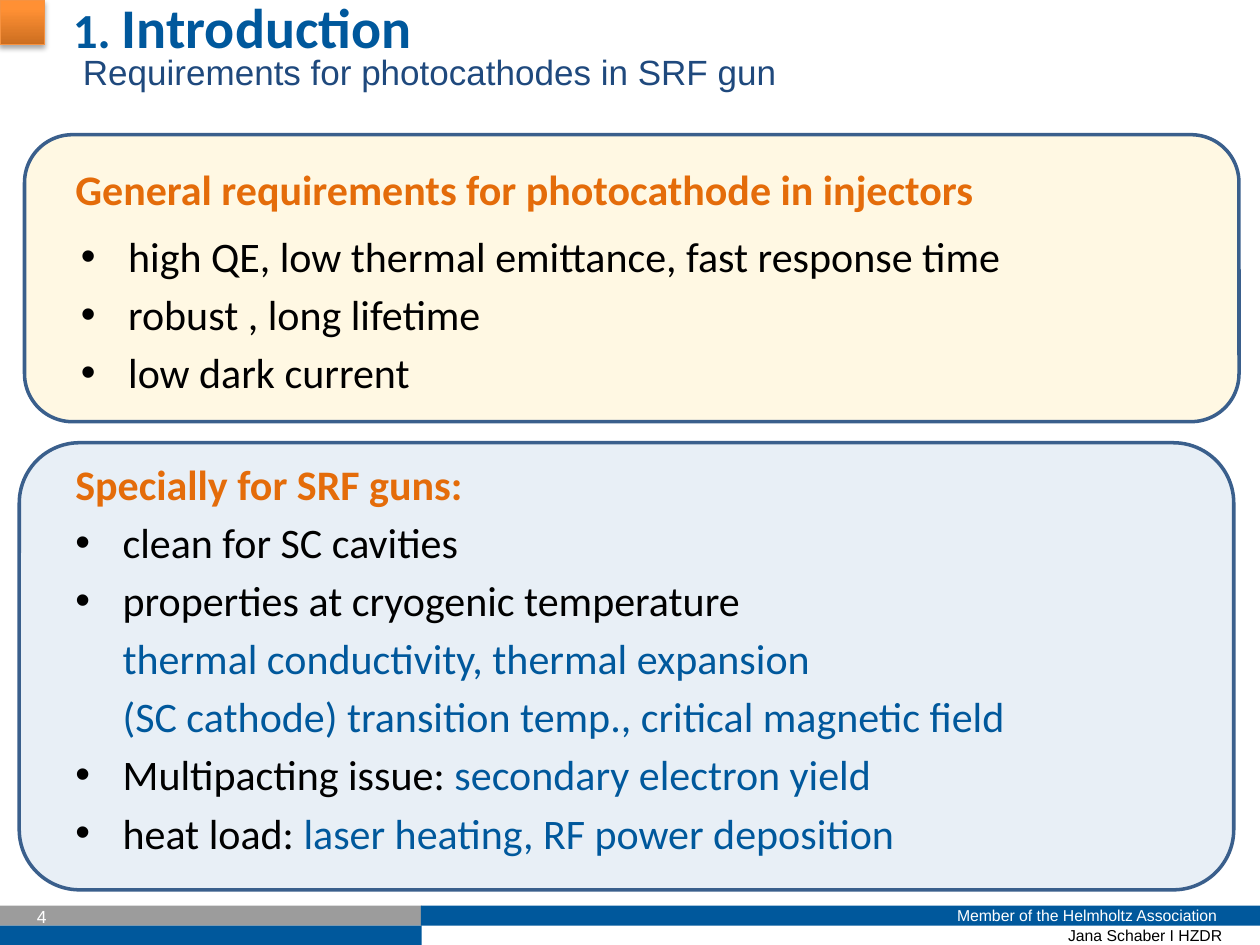
from lxml import etree
from pptx import Presentation
from pptx import util as u
from pptx.dml import color
from pptx.enum import shapes, text
from pptx.oxml import ns

BLUE, ORANGE, BLACK, WHITE = "00589C", "E46C0A", "000000", "FFFFFF"
GREY, NAVY, OUTLINE = "9C9C9C", "1F497D", "3A5F8C"


def rgb(code):
    return color.RGBColor.from_string(code)


def add_xml(parent, tag, **attributes):
    return etree.SubElement(parent, ns.qn(tag), attributes)


class SlideBuilder:
    heading_font, plain_font = "Calibri", "Arial"
    indent, gap = 27, 4.4

    def __init__(self, slide):
        self.slide = slide

    def place(self, item, box):
        item.left, item.top, item.width, item.height = (u.Pt(v) for v in box)

    def shape(self, kind, box, fill, opacity=None, outline=None, weight=2):
        item = self.slide.shapes.add_shape(kind, *(u.Pt(v) for v in box))
        item.fill.solid()
        item.fill.fore_color.rgb = rgb(fill)
        if opacity:
            tint = item._element.spPr.find(".//" + ns.qn("a:srgbClr"))
            add_xml(tint, "a:alpha", val=str(opacity * 1000))
        if outline:
            item.line.color.rgb = rgb(outline)
            item.line.width = u.Pt(weight)
        else:
            item.line.fill.background()
        item.shadow.inherit = False
        return item

    def panel(self, box, fill, opacity, corner):
        item = self.shape(shapes.MSO_SHAPE.ROUNDED_RECTANGLE, box, fill, opacity, OUTLINE)
        item.adjustments[0] = corner

    def bar(self, box, fill):
        return self.shape(shapes.MSO_SHAPE.RECTANGLE, box, fill)

    def corner_mark(self, box):
        mark = self.shape(shapes.MSO_SHAPE.RECTANGLE, box, ORANGE, outline="F69240", weight=0.75)
        mark.fill.gradient()
        mark.fill.gradient_angle = 90
        for stop, (position, code) in zip(mark.fill.gradient_stops, [(0, "CC6E20"), (0.8, "FF9034")]):
            stop.position = position
            stop.color.rgb = rgb(code)
        effects = mark._element.spPr.find(ns.qn("a:effectLst"))
        shadow = add_xml(effects, "a:outerShdw", blurRad=str(u.Pt(3.1)), dist=str(u.Pt(1.8)),
                         dir="5400000", rotWithShape="0")
        add_xml(add_xml(shadow, "a:srgbClr", val=BLACK), "a:alpha", val="35000")

    def fill_paragraph(self, paragraph, runs, font, bold=False, align=text.PP_ALIGN.LEFT):
        """Each run is (words, size, colour)."""
        paragraph.text = runs[0][0]
        for words, *_ in runs[1:]:
            paragraph.add_run().text = words
        paragraph.alignment = align
        for run, (_, size, code) in zip(paragraph.runs, runs):
            run.font.name, run.font.size, run.font.bold = font, u.Pt(size), bold
            run.font.color.rgb = rgb(code)

    def label(self, box, words, size, code, font=plain_font, bold=False,
              align=text.PP_ALIGN.LEFT, wrap=True):
        item = self.slide.shapes.add_textbox(*(u.Pt(v) for v in box))
        item.text_frame.word_wrap = wrap
        self.fill_paragraph(item.text_frame.paragraphs[0], [(words, size, code)], font, bold, align)
        return item

    def placeholder(self, item, box):
        """Move a placeholder in front of the panels."""
        self.place(item, box)
        self.slide.shapes._spTree.append(item._element)
        item.text_frame.auto_size = text.MSO_AUTO_SIZE.NONE
        item.text_frame.vertical_anchor = text.MSO_ANCHOR.TOP
        return item.text_frame

    def title(self, box, runs):
        frame = self.placeholder(self.slide.shapes.title, box)
        self.fill_paragraph(frame.paragraphs[0], runs, self.heading_font, bold=True)

    def items(self, frame, rows, first=None):
        """Each row is (bulleted, *(words, colour)); first is the first row's paragraph."""
        for number, (bulleted, *parts) in enumerate(rows):
            opening = first is not None and number == 0
            paragraph = first if opening else frame.add_paragraph()
            props = paragraph._p.get_or_add_pPr()
            props.set("marL", str(u.Pt(self.indent)))
            props.set("indent", str(-u.Pt(self.indent) if bulleted else 0))
            if bulleted:
                add_xml(props, "a:buFont", typeface="Arial")
                add_xml(props, "a:buChar", char="•")
            else:
                add_xml(props, "a:buNone")
            paragraph.space_before = u.Pt(0 if opening else self.gap)
            self.fill_paragraph(paragraph, [(words, 24, code) for words, code in parts],
                                self.heading_font)


def main():
    deck = Presentation()
    deck.slide_width, deck.slide_height = u.Pt(720), u.Pt(540)
    page = SlideBuilder(deck.slides.add_slide(deck.slide_layouts[1]))
    right = text.PP_ALIGN.RIGHT

    # Footer and corner mark
    page.label((249, 525.6, 456.5, 15), "Jana Schaber I HZDR", 9, BLACK, align=right)
    page.bar((0, 517.5, 241, 11.5), GREY)
    page.bar((240.5, 517.5, 479.5, 11.5), BLUE)
    page.bar((0, 529, 241, 11), BLUE)
    page.label((480, 514, 222.5, 19), "Member of the Helmholtz Association", 9, WHITE, align=right)
    page.label((14, 514, 74, 19), "4", 10, WHITE)
    page.corner_mark((0, 0, 25.5, 25.5))

    # Panels
    page.panel((11, 253, 694, 255.5), BLUE, 9, 0.135)
    page.panel((14, 77, 694, 164), "FFC000", 11, 0.167)

    # Title and subtitle
    page.title((34.5, -8, 648, 68), [("1. ", 28, BLUE), ("Introduction", 32, BLUE)])
    page.label((40.3, 25.2, 420, 31.5), "Requirements for photocathodes in SRF gun", 20, NAVY, wrap=False)

    # General requirements
    page.label((36, 90, 533, 36), "General requirements for photocathode in injectors", 24, ORANGE,
               font=page.heading_font, bold=True, wrap=False)
    general = page.placeholder(page.slide.placeholders[1], (39, 128, 669, 136))
    page.items(general, [
        (True, ("high QE, low thermal emittance, fast response time", BLACK)),
        (True, ("robust , long lifetime", BLACK)),
        (True, ("low dark current", BLACK)),
    ], first=general.paragraphs[0])

    # SRF gun requirements
    special = page.label((36, 258.5, 669.5, 272), "Specially for SRF guns:", 24, ORANGE,
                         font=page.heading_font, bold=True)
    page.items(special.text_frame, [
        (True, ("clean for SC cavities", BLACK)),
        (True, ("properties at cryogenic temperature", BLACK)),
        (False, ("thermal conductivity, thermal expansion", BLUE)),
        (False, ("(SC cathode) transition temp., critical magnetic field", BLUE)),
        (True, ("Multipacting issue: ", BLACK), ("secondary electron yield", BLUE)),
        (True, ("heat load: ", BLACK), ("laser heating, RF power deposition", BLUE)),
    ])

    deck.save("out.pptx")


if __name__ == "__main__":
    main()
